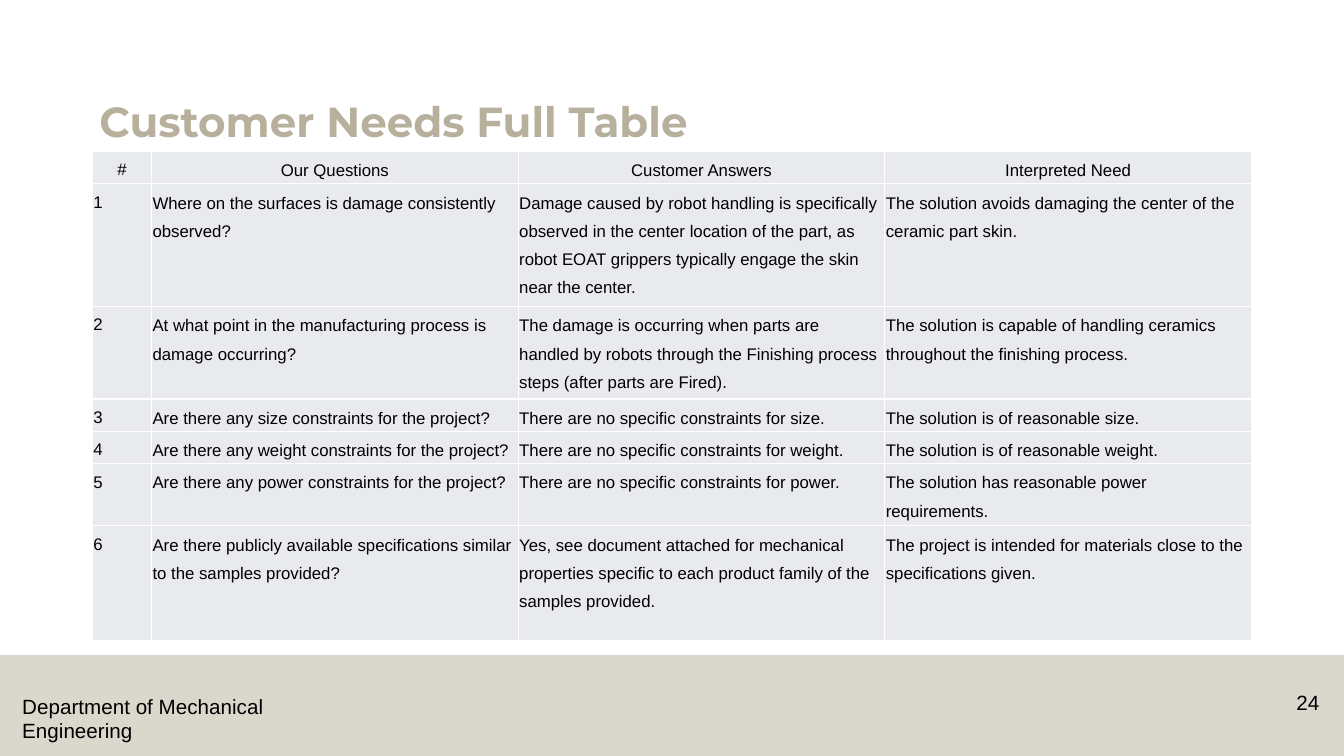
from lxml.etree import SubElement
from pptx import Presentation
from pptx.dml.color import RGBColor
from pptx.enum.shapes import MSO_SHAPE
from pptx.enum.text import MSO_ANCHOR, MSO_AUTO_SIZE, PP_ALIGN
from pptx.oxml import parse_xml
from pptx.oxml.ns import nsdecls, qn
from pptx.util import Pt

TAN, GREY, BLACK, WHITE = "B7B09C", "E8EAEE", "000000", "FFFFFF"
HEADS = ("#", "Our Questions", "Customer Answers", "Interpreted Need")
NEEDS = [
    (4, "Where on the surfaces is damage consistently observed?",
     "Damage caused by robot handling is specifically observed in the center "
     "location of the part, as robot EOAT grippers typically engage the skin "
     "near the center.",
     "The solution avoids damaging the center of the ceramic part skin."),
    (3, "At what point in the manufacturing process is damage occurring?",
     "The damage is occurring when parts are handled by robots through the "
     "Finishing process steps (after parts are Fired).",
     "The solution is capable of handling ceramics throughout the finishing process."),
    (1, "Are there any size constraints for the project?",
     "There are no specific constraints for size.",
     "The solution is of reasonable size."),
    (1, "Are there any weight constraints for the project?",
     "There are no specific constraints for weight.",
     "The solution is of reasonable weight."),
    (2, "Are there any power constraints for the project?",
     "There are no specific constraints for power.",
     "The solution has reasonable power requirements."),
    (4, "Are there publicly available specifications similar to the samples provided?",
     "Yes, see document attached for mechanical properties specific to each "
     "product family of the samples provided.",
     "The project is intended for materials close to the specifications given."),
]


def tint(part, code):
    """Give a fill or a font a solid colour."""
    if hasattr(part, "solid"):
        part.solid()
        part.fore_color.rgb = RGBColor.from_string(code)
    else:
        part.color.rgb = RGBColor.from_string(code)


def assign(item, form):
    """Set attributes of an item from a dict."""
    for name, value in form.items():
        setattr(item, name, value)


def write(frame, text, size, code=BLACK, face="Arial", bold=False, **form):
    """Put one formatted paragraph in a text frame."""
    frame.text = text
    para = frame.paragraphs[0]
    assign(para, form)
    font = para.runs[0].font
    assign(font, {"size": Pt(size), "name": face, "bold": bold})
    tint(font, code)


def place(item, box):
    """Move an item to a box in points."""
    names = ("left", "top", "width", "height")
    assign(item, dict(zip(names, map(Pt, box))))


def label(slide, box, text, **form):
    """Add a wrapped line of footer text."""
    frame = slide.shapes.add_textbox(*map(Pt, box)).text_frame
    frame.word_wrap = True
    write(frame, text, 14.7, **form)


def footer(slide, box):
    """Draw the pale band with department and page number."""
    left, top, width, height = box
    band = slide.shapes.add_shape(MSO_SHAPE.RECTANGLE, *map(Pt, box))
    band.shadow.inherit = False
    tint(band.fill, TAN)
    band.line.fill.background()
    tone = band.fill._xPr.find(qn("a:solidFill"))[0]
    SubElement(tone, qn("a:alpha"), val="50000")
    label(slide, (left + 8.8, top + 23.8, 258.5, 42.5),
          "Department of Mechanical Engineering")
    label(slide, (left + width - 66, top + 21, 55.5, 29), "24",
          alignment=PP_ALIGN.RIGHT)


def title(slide, box):
    """Fill and move the title placeholder."""
    head = slide.shapes.title
    place(head, box)
    frame = head.text_frame
    assign(frame, {"vertical_anchor": MSO_ANCHOR.BOTTOM, "word_wrap": True,
                   "auto_size": MSO_AUTO_SIZE.NONE,
                   "margin_left": Pt(5), "margin_right": Pt(5),
                   "margin_top": Pt(2.7), "margin_bottom": Pt(2.7)})
    write(frame, "Customer Needs Full Table", 30, TAN, "Montserrat", True,
          alignment=PP_ALIGN.LEFT, line_spacing=0.9)


def border(cell):
    """Draw thin white lines on all sides of a cell."""
    props = cell._tc.get_or_add_tcPr()
    for spot, side in enumerate("LRTB"):
        props.insert(spot, parse_xml(
            f'<a:ln{side} {nsdecls("a")} w="12700"><a:solidFill>'
            f'<a:srgbClr val="{WHITE}"/></a:solidFill></a:ln{side}>'))


def table(slide, box):
    """Build the needs table, each row as high as its line count."""
    left, top, width = box
    lines = [1] + [need[0] for need in NEEDS]
    rows = [HEADS] + [(str(n), *need[1:]) for n, need in enumerate(NEEDS, 1)]
    tall = [20.2 * count + 1.5 for count in lines]
    grid = slide.shapes.add_table(len(rows), len(HEADS), Pt(left), Pt(top),
                                  Pt(width), Pt(sum(tall))).table
    first = 42.3
    wide = [first] + [(width - first) / 3] * 3
    for col, size in zip(grid.columns, wide):
        col.width = Pt(size)
    for r, row in enumerate(rows):
        grid.rows[r].height = Pt(tall[r])
        for c, text in enumerate(row):
            cell = grid.cell(r, c)
            edge = Pt(0.7 if c else 0)
            assign(cell, {"margin_left": Pt(0.7), "margin_right": Pt(0.7),
                          "margin_top": edge, "margin_bottom": edge})
            tint(cell.fill, GREY)
            border(cell)
            write(cell.text_frame, text, 12, line_spacing=1.5,
                  alignment=PP_ALIGN.LEFT if r else PP_ALIGN.CENTER)


def main():
    """Make and save the slide."""
    deck = Presentation()
    assign(deck, {"slide_width": Pt(960), "slide_height": Pt(540)})
    slide = deck.slides.add_slide(deck.slide_layouts[5])
    footer(slide, (0, 468, 960, 72))
    title(slide, (66, 28.75, 828, 78.5))
    table(slide, (66, 108, 828))
    deck.save("out.pptx")


if __name__ == "__main__":
    main()
